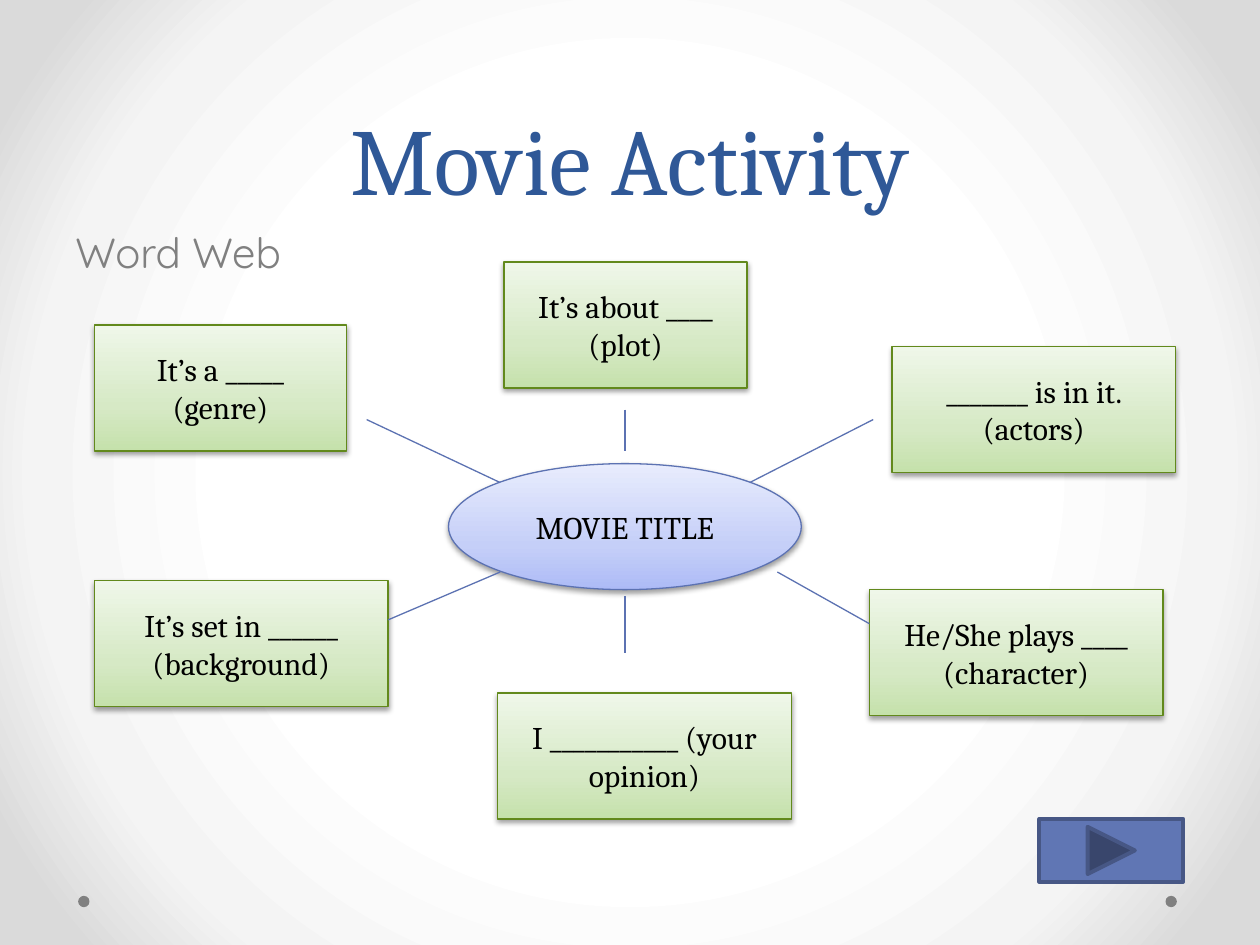
from lxml.etree import SubElement
from pptx import Presentation
from pptx.dml.color import RGBColor
from pptx.enum.shapes import MSO_CONNECTOR, MSO_SHAPE
from pptx.enum.text import MSO_ANCHOR, PP_ALIGN
from pptx.oxml.ns import qn
from pptx.util import Inches, Pt

BLACK = RGBColor(0x00, 0x00, 0x00)
GRAY = RGBColor(0x80, 0x80, 0x80)
TITLE_BLUE = RGBColor(0x2F, 0x58, 0x97)
LINE_BLUE = RGBColor(0x5C, 0x72, 0xB2)
LINE_GREEN = RGBColor(0x62, 0x89, 0x1C)
BUTTON_FILL = RGBColor(0x60, 0x76, 0xB4)
BUTTON_LINE = RGBColor(0x47, 0x57, 0x85)

# Gradient stops: (position in percent, colour)
BACKDROP = [(50, RGBColor(0xFF, 0xFF, 0xFF)), (76, RGBColor(0xF4, 0xF4, 0xF4)),
            (92, RGBColor(0xDA, 0xDA, 0xDA))]
BLUES = [(0, RGBColor(0xAD, 0xBB, 0xF6)), (35, RGBColor(0xC5, 0xCF, 0xF8)),
         (100, RGBColor(0xE8, 0xEC, 0xFD))]
GREENS = [(0, RGBColor(0xC5, 0xE1, 0xAB)), (35, RGBColor(0xD6, 0xE9, 0xC5)),
          (100, RGBColor(0xEF, 0xF7, 0xE9))]


class WordWeb:
    serif = "Cambria"
    sans = "Quicksand"
    thin = Pt(0.75)

    def __init__(self, slide):
        self.s = slide

    def gradient(self, fill, parent, stops, radial=False):
        fill.gradient()
        grad = next(parent.iter(qn("a:gradFill")))
        for child in list(grad):
            grad.remove(child)
        gs_list = SubElement(grad, qn("a:gsLst"))
        for pos, color in stops:
            gs = SubElement(gs_list, qn("a:gs"), pos=str(pos * 1000))
            SubElement(gs, qn("a:srgbClr"), val=str(color))
        if radial:
            shade = SubElement(grad, qn("a:path"), {"path": "circle"})
            SubElement(shade, qn("a:fillToRect"),
                       dict.fromkeys("ltrb", "50000"))
        else:
            SubElement(grad, qn("a:lin"), ang="16200000", scaled="0")

    def background(self, stops):
        self.gradient(self.s.background.fill, self.s.element, stops, True)

    def add_text(self, sp, text, size, color, font, align, anchor):
        tf = sp.text_frame
        tf.word_wrap = True
        tf.vertical_anchor = anchor
        p = tf.paragraphs[0]
        p.alignment = align
        r = p.add_run()
        r.text = text
        r.font.size = Pt(size)
        r.font.name = font
        r.font.color.rgb = color
        return p

    def text(self, box, *style):
        sp = self.s.shapes.add_textbox(*map(Inches, box))
        return self.add_text(sp, *style)

    def shape(self, kind, box, fill=None, line=None, width=thin):
        sp = self.s.shapes.add_shape(kind, *map(Inches, box))
        sp.shadow.inherit = False
        if fill is not None:
            sp.fill.solid()
            sp.fill.fore_color.rgb = fill
        if line is None:
            sp.line.fill.background()
        else:
            sp.line.color.rgb = line
            sp.line.width = width
        return sp

    def bubble(self, kind, box, text, stops, line):
        sp = self.shape(kind, box, line=line)
        sp_pr = sp.element.spPr
        self.gradient(sp.fill, sp_pr, stops)
        shadow = SubElement(sp_pr.find(qn("a:effectLst")), qn("a:outerShdw"),
                            blurRad=str(Pt(3.1)), dist=str(Pt(1.6)),
                            dir="5400000", rotWithShape="0")
        color = SubElement(shadow, qn("a:srgbClr"), val=str(BLACK))
        SubElement(color, qn("a:alpha"), val="38000")
        self.add_text(sp, text, 18, BLACK, self.serif, PP_ALIGN.CENTER,
                      MSO_ANCHOR.MIDDLE)

    def spoke(self, *ends):
        c = self.s.shapes.add_connector(MSO_CONNECTOR.STRAIGHT,
                                        *map(Inches, ends))
        c.line.color.rgb = LINE_BLUE
        c.line.width = self.thin
        SubElement(c.element.spPr, qn("a:effectLst"))


def main():
    prs = Presentation()
    prs.slide_width, prs.slide_height = Inches(10), Inches(7.5)
    web = WordWeb(prs.slides.add_slide(prs.slide_layouts[6]))

    # Backdrop and corner dots
    web.background(BACKDROP)
    for x in (9.25, 0.62):
        web.shape(MSO_SHAPE.OVAL, (x, 7.11, 0.09, 0.09), GRAY)

    # Title and subtitle
    p = web.text((0.5, 0, 9, 1.75), "Movie Activity", 54, TITLE_BLUE,
                 web.serif, PP_ALIGN.CENTER, MSO_ANCHOR.BOTTOM)
    p.line_spacing = Pt(58)
    p = web.text((0.5, 1.75, 9, 4.95), "Word Web", 24, GRAY,
                 web.sans, PP_ALIGN.LEFT, MSO_ANCHOR.TOP)
    p.space_before = Pt(5)

    # Centre of the web
    web.bubble(MSO_SHAPE.OVAL, (3.56, 3.68, 2.8, 1), "MOVIE TITLE",
               BLUES, LINE_BLUE)

    # Prompts: left, top, width, text
    prompts = [
        (0.75, 2.58, 2, "It’s a _____ (genre)"),
        (6.9, 4.68, 2.33, "He/She plays ____ (character)"),
        (0.75, 4.61, 2.33, "It’s set in ______ (background)"),
        (3.95, 5.5, 2.33, "I ___________ (your opinion)"),
        (4, 2.08, 1.93, "It’s about ____ (plot)"),
        (7.08, 2.75, 2.25, "_______ is in it. (actors)"),
    ]
    for x, y, w, text in prompts:
        web.bubble(MSO_SHAPE.RECTANGLE, (x, y, w, 1), text, GREENS, LINE_GREEN)

    # Spokes: x1, y1, x2, y2
    spokes = [
        (2.91, 3.33, 3.97, 3.83),
        (4.96, 3.25, 4.96, 3.58),
        (6.93, 3.33, 5.95, 3.83),
        (3.97, 4.54, 3.08, 4.92),
        (4.96, 4.73, 4.96, 5.18),
        (6.17, 4.54, 6.9, 4.95),
    ]
    for ends in spokes:
        web.spoke(*ends)

    # Next button
    web.shape(MSO_SHAPE.ACTION_BUTTON_FORWARD_OR_NEXT, (8.25, 6.5, 1.14, 0.5),
              BUTTON_FILL, BUTTON_LINE, Pt(2.25))

    prs.save("out.pptx")


if __name__ == "__main__":
    main()
